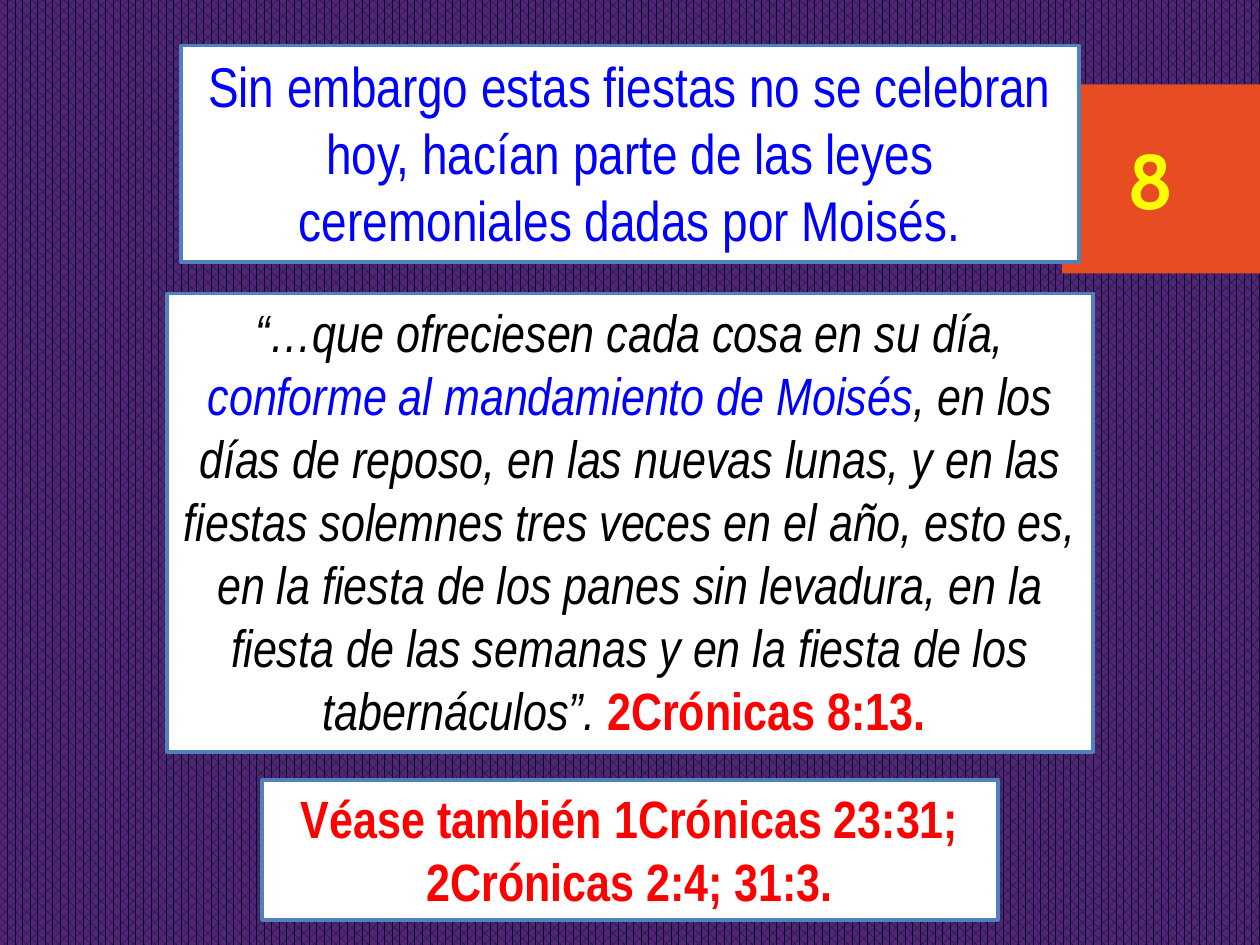
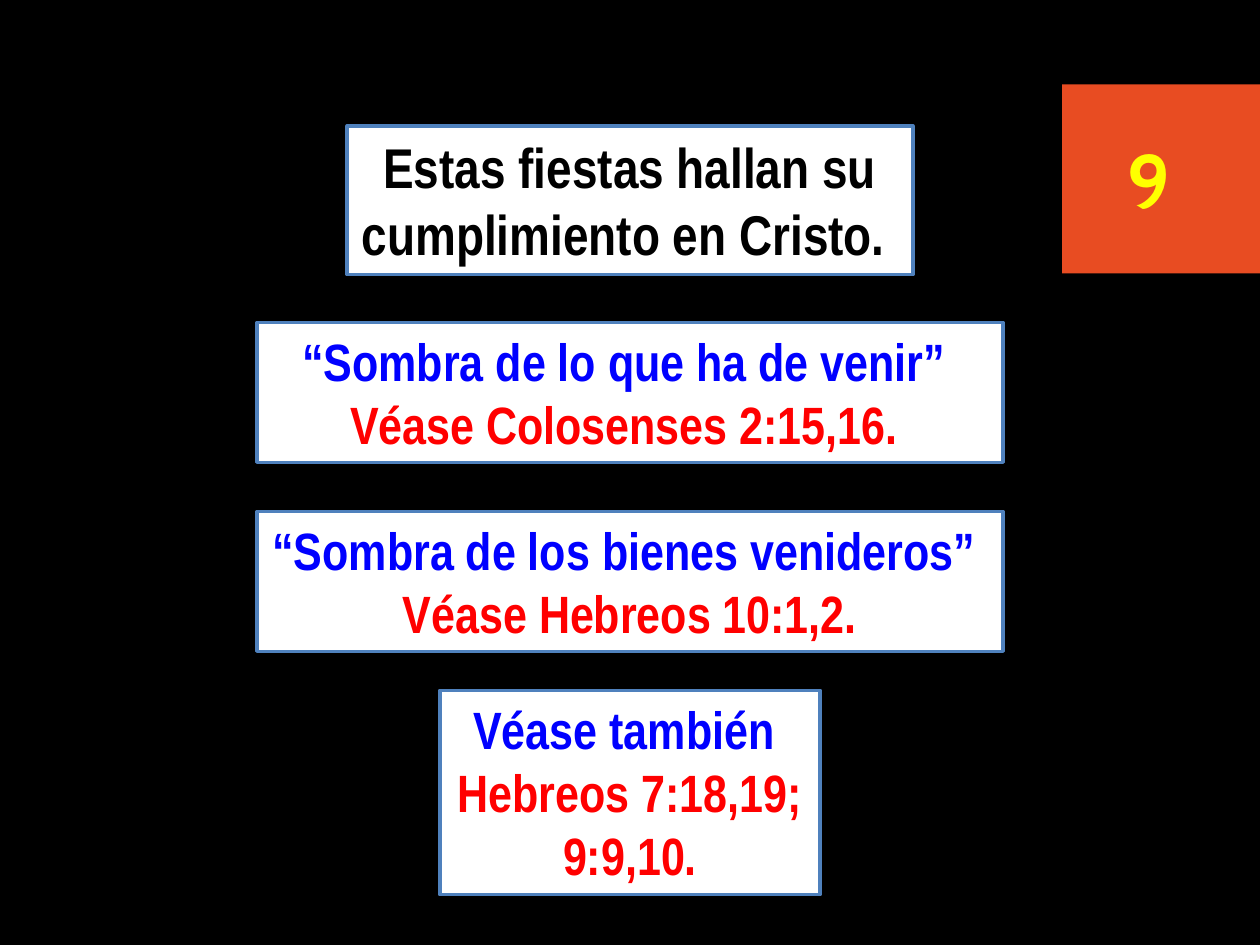
from lxml import etree
from pptx import Presentation
from pptx import util as u
from pptx.dml.color import RGBColor
from pptx.enum import dml, shapes, text
from pptx.oxml.ns import qn

PAGE_W, PAGE_H = 10, 7.5
BLACK, WHITE, BLUE, RED = "000000", "FFFFFF", "0000FF", "FF0000"
BORDER, ORANGE, YELLOW = "4F81BD", "E84C22", "FFFF00"
INK, PURPLE = "000D26", "532476"


def rgb(value):
    return RGBColor.from_string(value)


def fmt(words, color=BLACK, size=30, font="Arial Narrow", bold=False,
        italic=False, outline=0.75):
    """Text of one run together with its format."""
    return dict(words=words, color=color, size=size, font=font, bold=bold,
                italic=italic, outline=outline)


class Deck:
    def __init__(self):
        self.prs = Presentation()
        self.prs.slide_width = u.Inches(PAGE_W)
        self.prs.slide_height = u.Inches(PAGE_H)
        self.s = None

    def slide(self, back, pattern_ink=None):
        """Start a slide with a plain or patterned background and the tab."""
        self.s = self.prs.slides.add_slide(self.prs.slide_layouts[6])
        fill = self.s.background.fill
        if pattern_ink:
            fill.patterned()
            fill.pattern = dml.MSO_PATTERN.PERCENT_60
            fill.fore_color.rgb = rgb(pattern_ink)
            fill.back_color.rgb = rgb(back)
        else:
            fill.solid()
            fill.fore_color.rgb = rgb(back)
        self.rect(8.43, 0.67, 1.57, 1.5, ORANGE)

    def rect(self, x, y, w, h, fill, line=None):
        sp = self.s.shapes.add_shape(shapes.MSO_SHAPE.RECTANGLE, u.Inches(x),
                                     u.Inches(y), u.Inches(w), u.Inches(h))
        sp.shadow.inherit = False
        sp.fill.solid()
        sp.fill.fore_color.rgb = rgb(fill)
        if line:
            sp.line.color.rgb = rgb(line)
            sp.line.width = u.Pt(2)
        else:
            sp.line.fill.background()
        return sp

    def run(self, p, words, color, size, font, bold, italic, outline):
        r = p.add_run()
        r.text = words
        r.font.name, r.font.size = font, u.Pt(size)
        r.font.bold, r.font.italic = bold, italic
        r.font.color.rgb = rgb(color)
        # Letter outline in the colour of the text
        ln = etree.Element(qn("a:ln"), w=str(u.Pt(outline)))
        solid = etree.SubElement(ln, qn("a:solidFill"))
        etree.SubElement(solid, qn("a:srgbClr"), val=color)
        r._r.get_or_add_rPr().insert(0, ln)

    def fill_text(self, tf, paragraphs, align):
        tf.word_wrap = True
        for i, runs in enumerate(paragraphs):
            p = tf.add_paragraph() if i else tf.paragraphs[0]
            p.alignment = align
            for r in runs:
                self.run(p, **r)

    def card(self, y, w, h, *paragraphs):
        """White framed card, centred on the page."""
        tf = self.rect((PAGE_W - w) / 2, y, w, h, WHITE, BORDER).text_frame
        tf.vertical_anchor = text.MSO_ANCHOR.TOP
        self.fill_text(tf, paragraphs, text.PP_ALIGN.CENTER)
        tf.auto_size = text.MSO_AUTO_SIZE.SHAPE_TO_FIT_TEXT

    def number(self, n):
        """Slide number on the orange tab."""
        tf = self.s.shapes.add_textbox(u.Inches(8.58), u.Inches(0.82),
                                       u.Inches(1.27), u.Inches(1.19)).text_frame
        tf.vertical_anchor = text.MSO_ANCHOR.MIDDLE
        tf.margin_left = u.Inches(0.37)
        self.fill_text(tf, [[fmt(str(n), YELLOW, 44, "Cabin", bold=True)]],
                       text.PP_ALIGN.LEFT)


def bold(words, color, size=30):
    return fmt(words, color, size, bold=True)


def quote(words, color=BLACK):
    return fmt(words, color, italic=True, outline=1.5)


def main():
    d = Deck()

    # Feasts belonged to the ceremonial laws
    d.slide(PURPLE, pattern_ink=INK)
    d.card(0.36, 7.13, 1.72, [fmt(
        "Sin embargo estas fiestas no se celebran hoy, hacían parte de las "
        "leyes ceremoniales dadas por Moisés.", BLUE, 32, outline=1.5)])
    d.card(2.33, 7.35, 3.64, [
        quote("“…que ofreciesen cada cosa en su día, "),
        quote("conforme al mandamiento de Moisés", BLUE),
        quote(", en los días de reposo, en las nuevas lunas, y en las fiestas "
              "solemnes tres veces en el año, esto es, en la fiesta de los "
              "panes sin levadura, en la fiesta de las semanas y en la fiesta "
              "de los tabernáculos”. "),
        bold("2Crónicas 8:13. ", RED)])
    d.card(6.19, 5.84, 1.11,
           [bold("Véase también 1Crónicas 23:31;", RED)],
           [bold("2Crónicas 2:4; 31:3.", RED)])
    d.number(8)

    # Feasts fulfilled in Christ
    d.slide(BLACK)
    d.card(1, 4.49, 1.18,
           [bold("Estas fiestas hallan su cumplimiento en Cristo. ", BLACK, 32)])
    references = [
        (2.56, 5.92, 1.11, "“Sombra de lo que ha de venir” ",
         ["Véase Colosenses 2:15,16. "]),
        (4.06, 5.92, 1.11, "“Sombra de los bienes venideros” ",
         ["Véase Hebreos 10:1,2."]),
        (5.48, 3.02, 1.62, "Véase también ", ["Hebreos 7:18,19; ", "9:9,10."]),
    ]
    for y, w, h, heading, verses in references:
        d.card(y, w, h, [bold(heading, BLUE)], *[[bold(v, RED)] for v in verses])
    d.number(9)

    d.prs.save("out.pptx")


if __name__ == "__main__":
    main()
